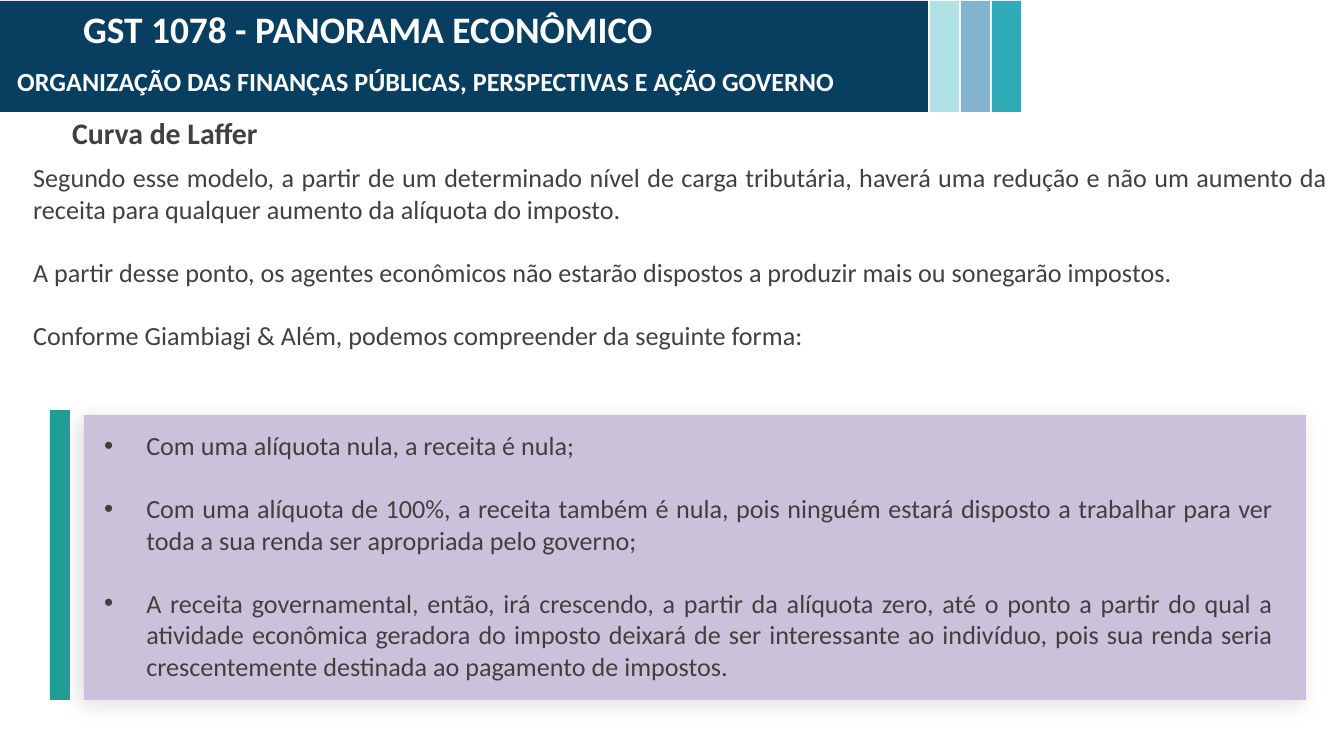
from lxml.etree import SubElement
from pptx import Presentation
from pptx.dml.color import RGBColor
from pptx.enum.shapes import MSO_SHAPE
from pptx.enum.text import PP_ALIGN
from pptx.oxml.ns import qn
from pptx.util import Pt

PX = 914400 / 134.4
COLORS = {
    "navy": "083E5F", "ice": "B0E2E5", "sky": "83B3CF", "teal": "30ACB8",
    "green": "219D93", "lilac": "CCC1DA", "gray": "404040", "white": "FFFFFF",
    "black": "000000",
}

COURSE = "GST 1078 - PANORAMA ECONÔMICO"
TOPIC = "ORGANIZAÇÃO DAS FINANÇAS PÚBLICAS, PERSPECTIVAS E AÇÃO GOVERNO"
HEADING = "Curva de Laffer"
INTRO = [
    "Segundo esse modelo, a partir de um determinado nível de carga tributária, "
    "haverá uma redução e não um aumento da receita para qualquer aumento da "
    "alíquota do imposto.",
    "A partir desse ponto, os agentes econômicos não estarão dispostos a produzir "
    "mais ou sonegarão impostos.",
    "Conforme Giambiagi & Além, podemos compreender da seguinte forma:",
]
POINTS = [
    "Com uma alíquota nula, a receita é nula;",
    "Com uma alíquota de 100%, a receita também é nula, pois ninguém estará "
    "disposto a trabalhar para ver toda a sua renda ser apropriada pelo governo;",
    "A receita governamental, então, irá crescendo, a partir da alíquota zero, até "
    "o ponto a partir do qual a atividade econômica geradora do imposto deixará de "
    "ser interessante ao indivíduo, pois sua renda seria crescentemente destinada "
    "ao pagamento de impostos.",
]
HEADER_TOP, HEADER_HEIGHT = 1, 111
STRIPES = ["ice", "sky", "teal"]
STRIPE_LEFT, STRIPE_WIDTH, STRIPE_PITCH = 930, 29, 31
BULLET_INDENT = 42


def emu(px):
    return round(px * PX)


def rgb(name):
    return RGBColor.from_string(COLORS[name])


def add_block(page, left, top, width, height, color):
    block = page.shapes.add_shape(
        MSO_SHAPE.RECTANGLE, *map(emu, (left, top, width, height)))
    block.shadow.inherit = False
    block.fill.solid()
    block.fill.fore_color.rgb = rgb(color)
    block.line.fill.background()
    return block


def add_soft_shadow(block):
    effects = block._element.spPr.find(qn("a:effectLst"))
    shadow = SubElement(effects, qn("a:outerShdw"), blurRad=str(Pt(12)),
                        dist=str(Pt(3)), dir=str(135 * 60000), rotWithShape="0")
    tint = SubElement(shadow, qn("a:srgbClr"), val=COLORS["black"])
    SubElement(tint, qn("a:alpha"), val="13000")


def add_bullet(para):
    props = para._p.get_or_add_pPr()
    props.set("marL", str(emu(BULLET_INDENT)))
    props.set("indent", str(-emu(BULLET_INDENT)))
    SubElement(props, qn("a:buFont"), typeface="Arial")
    SubElement(props, qn("a:buChar"), char="•")


def add_text(page, left, top, width, height, texts, size=14, color="gray",
             bold=False, align=PP_ALIGN.LEFT, wrap=True, gap=17, bullets=False):
    box = page.shapes.add_textbox(*map(emu, (left, top, width, height)))
    frame = box.text_frame
    frame.word_wrap = wrap
    for index, text in enumerate(texts):
        para = frame.paragraphs[0] if index == 0 else frame.add_paragraph()
        para.alignment = align
        if index:
            para.space_before = Pt(gap)
        if bullets:
            add_bullet(para)
        span = para.add_run()
        span.text = text
        span.font.name = "Calibri"
        span.font.size = Pt(size)
        span.font.bold = bold
        span.font.color.rgb = rgb(color)


def main():
    deck = Presentation()
    deck.slide_width, deck.slide_height = emu(1344), emu(756)
    page = deck.slides.add_slide(deck.slide_layouts[6])

    add_block(page, -2, HEADER_TOP, 930, HEADER_HEIGHT, "navy")
    for index, color in enumerate(STRIPES):
        add_block(page, STRIPE_LEFT + index * STRIPE_PITCH, HEADER_TOP,
                  STRIPE_WIDTH, HEADER_HEIGHT, color)
    add_soft_shadow(add_block(page, 84, 415, 1222, 285, "lilac"))
    add_block(page, 50, 410, 20, 290, "green")

    add_text(page, 1, 0, 734, 59, [COURSE], size=20, color="white", bold=True,
             align=PP_ALIGN.CENTER)
    add_text(page, 4, 59, 851, 46, [TOPIC], color="white", bold=True, wrap=False)
    add_text(page, 59, 108, 216, 50, [HEADING], size=16, bold=True, wrap=False)
    add_text(page, 20, 155, 1322, 203, INTRO, align=PP_ALIGN.JUSTIFY)
    add_text(page, 91, 423, 1196, 267, POINTS, align=PP_ALIGN.JUSTIFY, bullets=True)

    deck.save("out.pptx")


if __name__ == "__main__":
    main()
